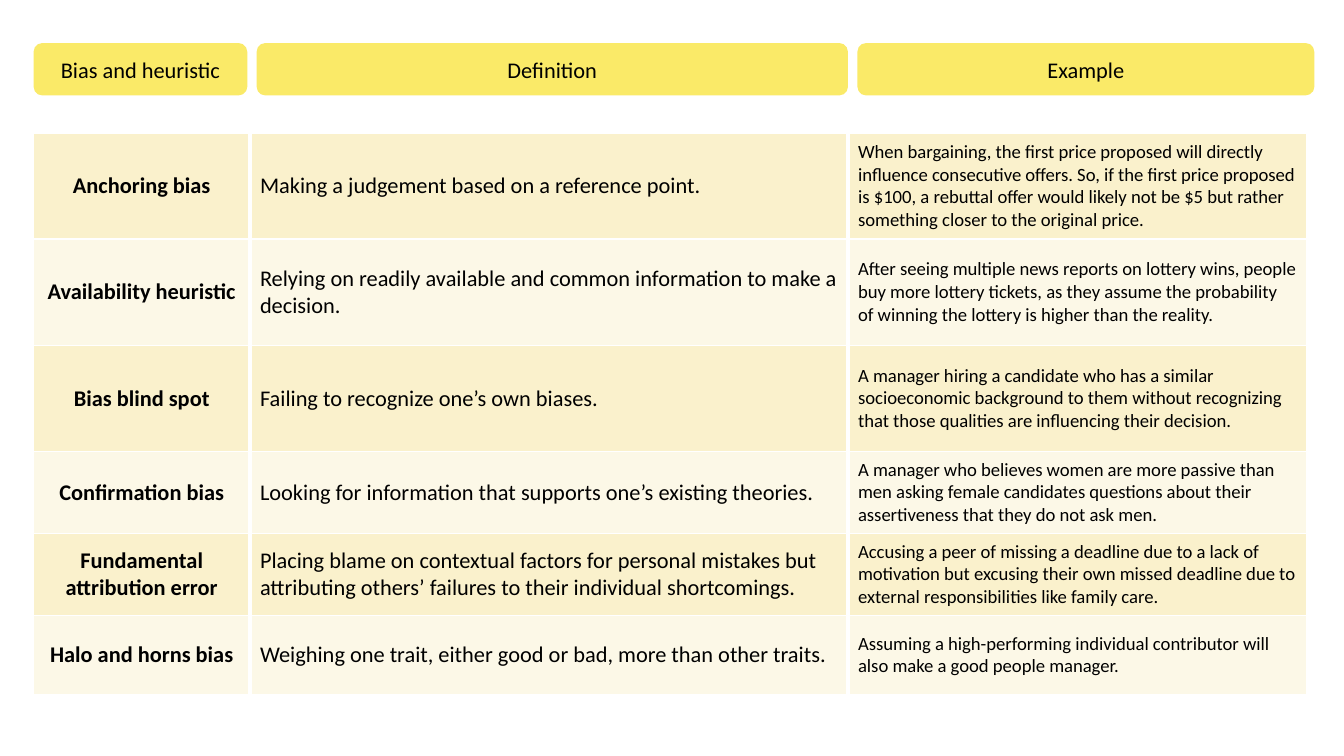
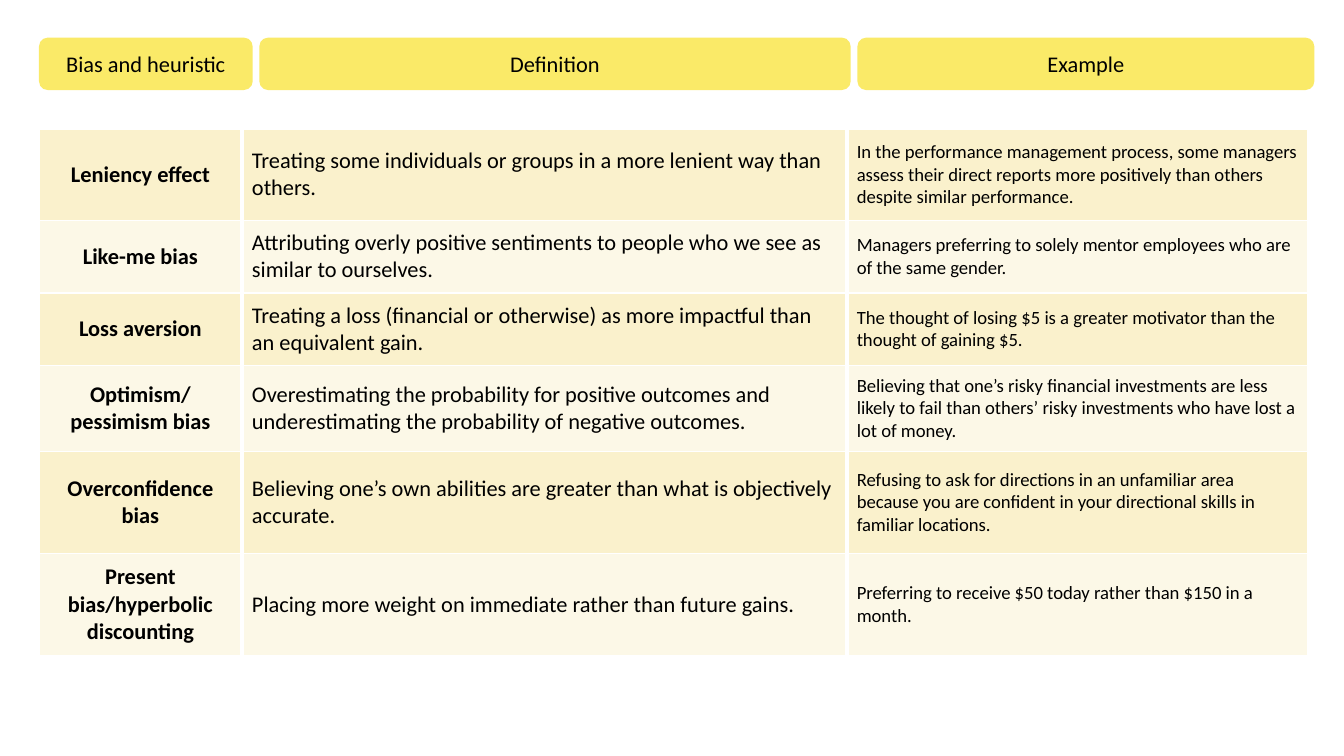
from dataclasses import dataclass

from lxml.etree import SubElement
from pptx import Presentation
from pptx.dml.color import RGBColor
from pptx.enum.shapes import MSO_SHAPE
from pptx.enum.text import MSO_ANCHOR, PP_ALIGN
from pptx.oxml.ns import qn
from pptx.slide import Slide
from pptx.table import _Cell
from pptx.util import Inches, Pt

FONT = "Calibri"
BLACK = "000000"
WHITE = "FFFFFF"
HEADER_YELLOW = "FAEA68"
ROW_FILLS = ("FAF1CC", "FCF8E7")
HEADER_HEIGHT = 0.39
THIN, THICK = 1, 2.25


@dataclass(frozen=True)
class Column:
    heading: str
    heading_width: float
    size: float
    bold: bool
    align: PP_ALIGN
    left_border: float
    right_border: float


@dataclass(frozen=True)
class Bias:
    name: str
    definition: str
    example: str
    height: float


@dataclass(frozen=True)
class BiasPage:
    left: float
    header_top: float
    header_gap: float
    table_top: float
    column_widths: tuple[float, ...]
    biases: tuple[Bias, ...]


COLUMNS = (
    Column("Bias and heuristic", 1.59, 12, True, PP_ALIGN.CENTER, THIN, THICK),
    Column("Definition", 4.4, 12, False, PP_ALIGN.LEFT, THICK, THICK),
    Column("Example", 3.4, 10, False, PP_ALIGN.LEFT, THICK, THIN),
)

PAGES = (
    BiasPage(0.25, 0.32, 0.07, 0.99, (1.61, 4.45, 3.41), (
        Bias("Anchoring bias",
             "Making a judgement based on a reference point.",
             "When bargaining, the first price proposed will directly influence "
             "consecutive offers. So, if the first price proposed is $100, a rebuttal "
             "offer would likely not be $5 but rather something closer to the "
             "original price.", 0.79),
        Bias("Availability heuristic",
             "Relying on readily available and common information to make a decision.",
             "After seeing multiple news reports on lottery wins, people buy more "
             "lottery tickets, as they assume the probability of winning the lottery "
             "is higher than the reality.", 0.79),
        Bias("Bias blind spot",
             "Failing to recognize one’s own biases.",
             "A manager hiring a candidate who has a similar socioeconomic background "
             "to them without recognizing that those qualities are influencing their "
             "decision.", 0.79),
        Bias("Confirmation bias",
             "Looking for information that supports one’s existing theories.",
             "A manager who believes women are more passive than men asking female "
             "candidates questions about their assertiveness that they do not ask men.",
             0.61),
        Bias("Fundamental attribution error",
             "Placing blame on contextual factors for personal mistakes but "
             "attributing others’ failures to their individual shortcomings.",
             "Accusing a peer of missing a deadline due to a lack of motivation but "
             "excusing their own missed deadline due to external responsibilities "
             "like family care.", 0.61),
        Bias("Halo and horns bias",
             "Weighing one trait, either good or bad, more than other traits.",
             "Assuming a high-performing individual contributor will also make a good "
             "people manager.", 0.59),
    )),
    BiasPage(0.29, 0.28, 0.05, 0.96, (1.51, 4.5, 3.43), (
        Bias("Leniency effect",
             "Treating some individuals or groups in a more lenient way than others.",
             "In the performance management process, some managers assess their "
             "direct reports more positively than others despite similar performance.",
             0.68),
        Bias("Like-me bias",
             "Attributing overly positive sentiments to people who we see as similar "
             "to ourselves.",
             "Managers preferring to solely mentor employees who are of the same "
             "gender.", 0.54),
        Bias("Loss aversion",
             "Treating a loss (financial or otherwise) as more impactful than an "
             "equivalent gain.",
             "The thought of losing $5 is a greater motivator than the thought of "
             "gaining $5.", 0.54),
        Bias("Optimism/pessimism bias",
             "Overestimating the probability for positive outcomes and "
             "underestimating the probability of negative outcomes.",
             "Believing that one’s risky financial investments are less likely to "
             "fail than others’ risky investments who have lost a lot of money.", 0.64),
        Bias("Overconfidence bias",
             "Believing one’s own abilities are greater than what is objectively "
             "accurate.",
             "Refusing to ask for directions in an unfamiliar area because you are "
             "confident in your directional skills in familiar locations.", 0.76),
        Bias("Present bias/hyperbolic discounting",
             "Placing more weight on immediate rather than future gains.",
             "Preferring to receive $50 today rather than $150 in a month.", 0.76),
    )),
)

SIDE_MARGIN = Inches(0.15) // 2
CELL_FORMAT = {
    "vertical_anchor": MSO_ANCHOR.MIDDLE,
    "margin_left": SIDE_MARGIN,
    "margin_right": SIDE_MARGIN,
    "margin_top": SIDE_MARGIN // 2,
    "margin_bottom": SIDE_MARGIN // 2,
}


def paint(target, color: str) -> None:
    """Give a shape or a cell a solid fill."""
    target.fill.solid()
    target.fill.fore_color.rgb = RGBColor.from_string(color)


def write(frame, text: str, size: float, bold: bool, align: PP_ALIGN) -> None:
    frame.word_wrap = True
    paragraph = frame.paragraphs[0]
    paragraph.alignment = align
    run = paragraph.add_run()
    run.text = text
    for attribute, value in {"name": FONT, "size": Pt(size), "bold": bold}.items():
        setattr(run.font, attribute, value)
    run.font.color.rgb = RGBColor.from_string(BLACK)


def add_borders(cell: _Cell, column: Column) -> None:
    """Draw white cell borders; call before the cell is filled."""
    widths = {"a:lnL": column.left_border, "a:lnR": column.right_border,
              "a:lnT": THIN, "a:lnB": THIN}
    properties = cell._tc.get_or_add_tcPr()
    for edge, width in widths.items():
        border = SubElement(properties, qn(edge), w=str(Pt(width)))
        fill = SubElement(border, qn("a:solidFill"))
        SubElement(fill, qn("a:srgbClr"), val=WHITE)


def add_headers(slide: Slide, page: BiasPage) -> None:
    left = page.left
    for column in COLUMNS:
        header = slide.shapes.add_shape(
            MSO_SHAPE.ROUNDED_RECTANGLE, Inches(left), Inches(page.header_top),
            Inches(column.heading_width), Inches(HEADER_HEIGHT))
        header.shadow.inherit = False
        header.line.fill.background()
        paint(header, HEADER_YELLOW)
        header.text_frame.vertical_anchor = MSO_ANCHOR.MIDDLE
        write(header.text_frame, column.heading, 12, False, PP_ALIGN.CENTER)
        left += column.heading_width + page.header_gap


def add_bias_table(slide: Slide, page: BiasPage) -> None:
    table = slide.shapes.add_table(
        len(page.biases), len(COLUMNS), Inches(page.left), Inches(page.table_top),
        Inches(sum(page.column_widths)),
        Inches(sum(bias.height for bias in page.biases))).table
    table.first_row = table.horz_banding = False
    for table_column, width in zip(table.columns, page.column_widths):
        table_column.width = Inches(width)
    for index, bias in enumerate(page.biases):
        row = table.rows[index]
        row.height = Inches(bias.height)
        texts = (bias.name, bias.definition, bias.example)
        for cell, column, text in zip(row.cells, COLUMNS, texts):
            for attribute, value in CELL_FORMAT.items():
                setattr(cell, attribute, value)
            add_borders(cell, column)
            paint(cell, ROW_FILLS[index % len(ROW_FILLS)])
            write(cell.text_frame, text, column.size, column.bold, column.align)


def main() -> None:
    deck = Presentation()
    deck.slide_width = Inches(10)
    deck.slide_height = Inches(10) * 9 // 16
    blank_layout = deck.slide_layouts[6]
    for page in PAGES:
        slide = deck.slides.add_slide(blank_layout)
        add_bias_table(slide, page)
        add_headers(slide, page)
    deck.save("out.pptx")


if __name__ == "__main__":
    main()
